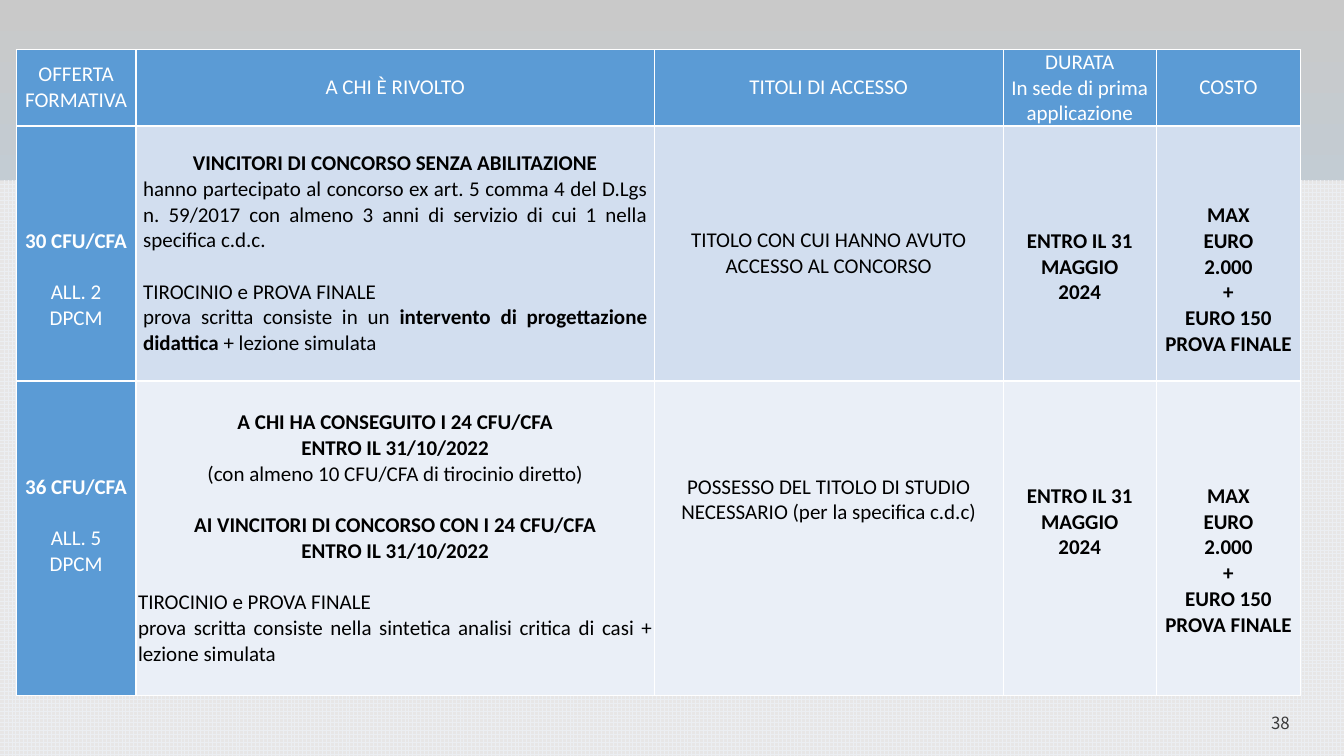
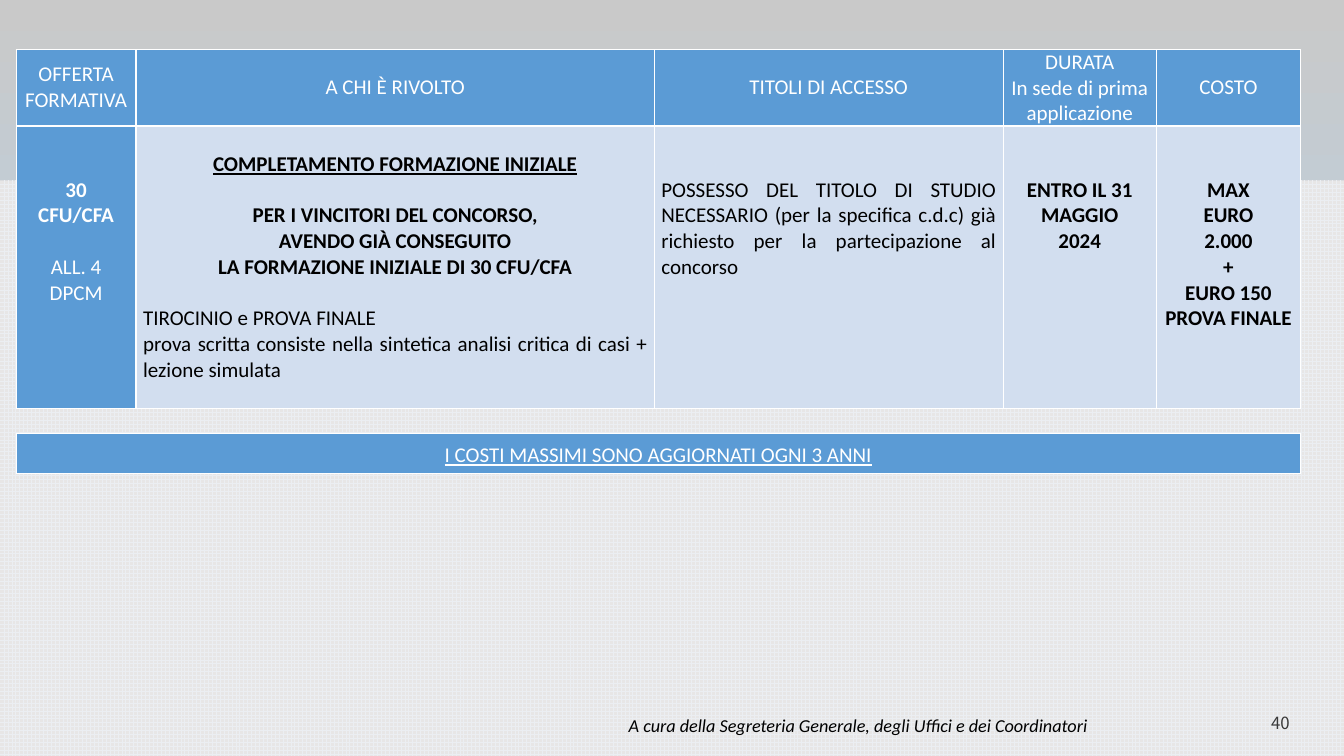
from dataclasses import dataclass

from lxml import etree
from pptx import Presentation
from pptx.dml.color import RGBColor
from pptx.enum.dml import MSO_PATTERN
from pptx.enum.shapes import MSO_SHAPE
from pptx.enum.text import MSO_ANCHOR, PP_ALIGN
from pptx.oxml.ns import qn
from pptx.util import Emu, Inches, Pt

LEFT, CENTER, RIGHT, JUSTIFY = PP_ALIGN.LEFT, PP_ALIGN.CENTER, PP_ALIGN.RIGHT, PP_ALIGN.JUSTIFY
TOP, MIDDLE = MSO_ANCHOR.TOP, MSO_ANCHOR.MIDDLE
LARGE_GRID, RECTANGLE = MSO_PATTERN.LARGE_GRID, MSO_SHAPE.RECTANGLE

WIDTH, HEIGHT = 13.33, 7.5
BLUE, WHITE, BLACK = "5B9BD5", "FFFFFF", "000000"
BANDS = ["D2DEEF", "EAEFF7"]
SKY = [(0, "C9C9C9"), (74, "B5D2EC"), (83, "B5D2EC"), (100, "CEE1F2")]
FONT, NUMBER_FONT = "Calibri", "Noto Sans CJK JP"
LINE = 18.3  # points taken by one line of table text

TABLE_LEFT, TABLE_TOP = 0.16, 0.49
COLUMNS = [1.19, 5.14, 3.46, 1.52, 1.43]
HEADER_HEIGHT = 0.76


@dataclass
class Line:
    """A paragraph: **marks** switch bold, gap is the space above in lines."""
    text: str
    align: int = CENTER
    gap: int = 0
    underline: bool = False
    spacing: float = 1.0


@dataclass
class Entry:
    """A table cell: above and below are paddings in lines."""
    lines: list
    anchor: int = MIDDLE
    above: int = 0
    below: int = 0
    side: float = 0.07


def color(value):
    return RGBColor.from_string(value)


def write(frame, lines, **font):
    """Fill a text frame with lines; font holds size, name, color, italic."""
    ink = font.pop("color")
    for index, line in enumerate(lines):
        para = frame.paragraphs[0] if index == 0 else frame.add_paragraph()
        layout = {"alignment": line.align, "line_spacing": line.spacing,
                  "space_before": Pt(line.gap * LINE)}
        for name, value in layout.items():
            setattr(para, name, value)
        for order, text in enumerate(line.text.split("**")):
            if not text:
                continue
            span = para.add_run()
            span.text = text
            look = {**font, "bold": order % 2 == 1, "underline": line.underline}
            for name, value in look.items():
                setattr(span.font, name, value)
            span.font.color.rgb = color(ink)


def add_label(page, box, text, **font):
    label = page.shapes.add_textbox(*map(Inches, box))
    label.text_frame.word_wrap = True
    label.text_frame.vertical_anchor = MIDDLE
    write(label.text_frame, [Line(text, RIGHT)], **font)


def outline(cell):
    properties = cell._tc.get_or_add_tcPr()
    for side in ("lnL", "lnR", "lnT", "lnB"):
        edge = etree.SubElement(properties, qn(f"a:{side}"), w=str(Pt(1)))
        fill = etree.SubElement(edge, qn("a:solidFill"))
        etree.SubElement(fill, qn("a:srgbClr"), val=WHITE)


def fill_cell(cell, entry, fill, ink):
    outline(cell)
    cell.fill.solid()
    cell.fill.fore_color.rgb = color(fill)
    look = {"vertical_anchor": entry.anchor,
            "margin_left": Inches(entry.side), "margin_right": Inches(entry.side),
            "margin_top": Pt(entry.above * LINE), "margin_bottom": Pt(entry.below * LINE)}
    for name, value in look.items():
        setattr(cell, name, value)
    write(cell.text_frame, entry.lines, size=Pt(15), name=FONT, color=ink)


def add_grid(page, top, columns, heights, rows):
    """Table with a blue first row and first column over banded rows."""
    box = (TABLE_LEFT, top, sum(columns), sum(heights))
    table = page.shapes.add_table(len(rows), len(columns), *map(Inches, box)).table
    table.first_row = table.horz_banding = False
    for column, width in zip(table.columns, columns):
        column.width = Inches(width)
    for row, height in zip(table.rows, heights):
        row.height = Inches(height)
    for r, entries in enumerate(rows):
        for c, entry in enumerate(entries):
            heading = r == 0 or c == 0
            fill = BLUE if heading else BANDS[(r - 1) % len(BANDS)]
            fill_cell(table.cell(r, c), entry, fill, WHITE if heading else BLACK)


def centered(*texts):
    return [Line(text) for text in texts]


HEADER = [Entry(centered(*texts), side=0.01) for texts in (
    ["OFFERTA", "FORMATIVA"], ["A CHI È RIVOLTO"], ["TITOLI DI ACCESSO"],
    ["DURATA", "In sede di prima applicazione"], ["COSTO"])]
DURATION = centered("**ENTRO IL 31**", "**MAGGIO**", "**2024**")
COST = centered("**MAX**", "**EURO**", "**2.000**", "**+**", "**EURO 150**", "**PROVA FINALE**")
CASE_ANALYSIS = "prova scritta consiste nella sintetica analisi critica di casi + lezione simulata"


def offer(annex, *credits):
    return centered(*credits) + [Line(annex, gap=1), Line("DPCM")]


def final_test(text):
    return [Line("TIROCINIO e PROVA FINALE", LEFT, gap=1), Line(text, JUSTIFY)]


WINNERS = [
    Entry(offer("ALL. 2", "**30 CFU/CFA**"), TOP, above=4),
    Entry([
        Line("**VINCITORI DI CONCORSO SENZA ABILITAZIONE**"),
        Line("hanno partecipato al concorso ex art. 5 comma 4 del D.Lgs n. 59/2017 con almeno "
             "3 anni di servizio di cui 1 nella specifica c.d.c.", JUSTIFY),
        *final_test("prova scritta consiste in un **intervento di progettazione didattica** "
                    "+ lezione simulata")]),
    Entry(centered("TITOLO CON CUI HANNO AVUTO ACCESSO AL CONCORSO")),
    Entry(DURATION, TOP, above=4),
    Entry(COST, TOP, above=3),
]
HOLDERS = [
    Entry(offer("ALL. 5", "**36 CFU/CFA**"), below=1, side=0.02),
    Entry([
        *centered("**A CHI HA CONSEGUITO I 24 CFU/CFA**", "**ENTRO IL 31/10/2022**",
                  "(con almeno 10 CFU/CFA di tirocinio diretto)"),
        Line("**AI VINCITORI DI CONCORSO CON I 24 CFU/CFA**", gap=1),
        Line("**ENTRO IL 31/10/2022**"),
        *final_test(CASE_ANALYSIS)], side=0.02),
    Entry(centered("POSSESSO DEL TITOLO DI STUDIO NECESSARIO (per la specifica c.d.c)"),
          below=3, side=0.02),
    Entry(DURATION, TOP, above=4, side=0.02),
    Entry(COST, TOP, above=4, side=0.02),
]
COMPLETION = [
    Entry(offer("ALL. 4", "**30**", "**CFU/CFA**"), TOP, above=2),
    Entry([
        Line("**COMPLETAMENTO FORMAZIONE INIZIALE**", underline=True),
        Line("**PER I VINCITORI DEL CONCORSO,**", gap=1),
        *centered("**AVENDO GIÀ CONSEGUITO**", "**LA FORMAZIONE INIZIALE DI 30 CFU/CFA**"),
        *final_test(CASE_ANALYSIS)], TOP, above=1),
    Entry([Line("POSSESSO DEL TITOLO DI STUDIO NECESSARIO (per la specifica c.d.c) già "
                "richiesto per la partecipazione al concorso", JUSTIFY)], TOP, above=2),
    Entry(DURATION, TOP, above=2),
    Entry(COST, TOP, above=2),
]
NOTICE = Entry([Line("I COSTI MASSIMI SONO AGGIORNATI OGNI 3 ANNI", underline=True, spacing=1.15)])


def paint_background(deck):
    """Give the master the vertical gradient that all pages inherit."""
    master = deck.slide_master
    fill = master.background.fill
    fill.gradient()
    fill.gradient_angle = 270
    stops = master.element.find(".//" + qn("a:gsLst"))
    for stop in list(stops):
        stops.remove(stop)
    for share, value in SKY:
        stop = etree.SubElement(stops, qn("a:gs"), pos=str(share * 1000))
        etree.SubElement(stop, qn("a:srgbClr"), val=value)


def add_page(deck, number):
    page = deck.slides.add_slide(deck.slide_layouts[6])
    top = Inches(1.79)
    floor = page.shapes.add_shape(RECTANGLE, Emu(0), top, deck.slide_width,
                                  deck.slide_height - top)
    floor.shadow.inherit = False
    floor.line.fill.background()
    floor.fill.patterned()
    floor.fill.pattern = LARGE_GRID
    floor.fill.fore_color.rgb = color("EBEEF2")
    floor.fill.back_color.rgb = color("E7E6E6")
    add_label(page, (11.97, 6.97, 0.92, 0.4), str(number),
              size=Pt(12), name=NUMBER_FONT, color="393939")
    return page


def add_offers_page(deck):
    page = add_page(deck, 38)
    add_grid(page, TABLE_TOP, COLUMNS, [HEADER_HEIGHT, 2.53, 3.12], [HEADER, WINNERS, HOLDERS])


def add_completion_page(deck):
    page = add_page(deck, 40)
    add_grid(page, TABLE_TOP, COLUMNS, [HEADER_HEIGHT, 2.8], [HEADER, COMPLETION])
    add_grid(page, 4.3, [sum(COLUMNS)], [0.4], [[NOTICE]])
    add_label(page, (5.88, 7.03, 5, 0.32),
              "A cura della Segreteria Generale, degli Uffici e dei Coordinatori",
              size=Pt(13), name=FONT, color=BLACK, italic=True)


def main():
    deck = Presentation()
    deck.slide_width, deck.slide_height = Inches(WIDTH), Inches(HEIGHT)
    paint_background(deck)
    add_offers_page(deck)
    add_completion_page(deck)
    deck.save("out.pptx")


if __name__ == "__main__":
    main()
